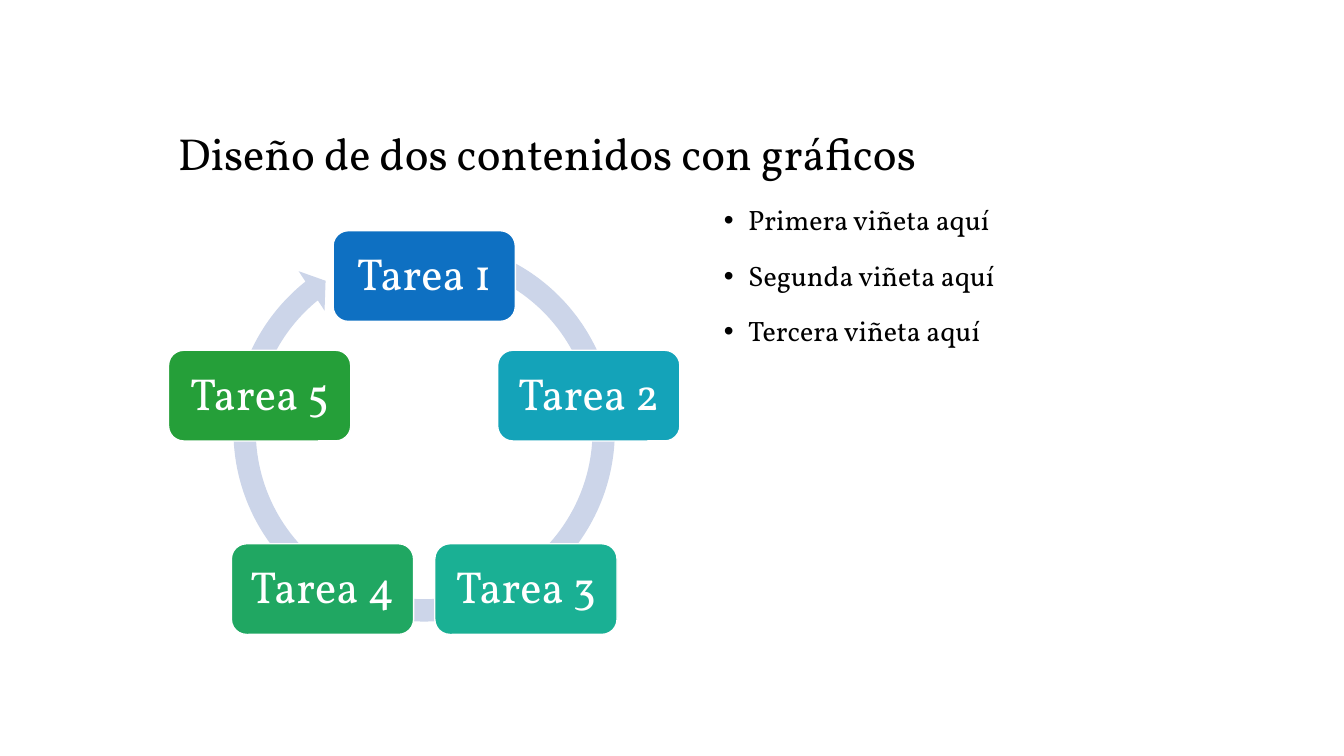
from math import cos, pi, sin

from lxml.etree import SubElement
from pptx import Presentation
from pptx.dml.color import RGBColor as Rgb
from pptx.enum.shapes import MSO_SHAPE as Shape
from pptx.enum.text import MSO_ANCHOR as Anchor, PP_ALIGN as Align
from pptx.oxml.ns import qn
from pptx.util import Inches, Pt

# Grid: 160 columns by 90 rows
COLS, ROWS = 160, 90
UNIT = Inches(7.5) / ROWS
FONT = "Vollkorn"
BLACK = Rgb(0x00, 0x00, 0x00)
WHITE = Rgb(0xFF, 0xFF, 0xFF)
RING = Rgb(0xCC, 0xD5, 0xE9)
HUES = [
    Rgb(0x0E, 0x70, 0xC2),
    Rgb(0x14, 0xA3, 0xB9),
    Rgb(0x1A, 0xB0, 0x94),
    Rgb(0x20, 0xA7, 0x62),
    Rgb(0x25, 0x9F, 0x39),
]

TITLE = (20, 7, 126, 15)
WHEEL = (20, 24, 61, 55)
LIST = (85, 24, 61, 55)


def units(*box):
    return [round(n * UNIT) for n in box]


def write(par, text, size, color):
    par.line_spacing = 0.9
    run = par.add_run()
    run.text = text
    run.font.name = FONT
    run.font.size = Pt(size)
    run.font.color.rgb = color


def add_frame(slide, box):
    frame = slide.shapes.add_textbox(*units(*box)).text_frame
    frame.word_wrap = True
    return frame


def add_title(slide, box, text):
    frame = add_frame(slide, box)
    frame.vertical_anchor = Anchor.BOTTOM
    write(frame.paragraphs[0], text, 32, BLACK)


def add_list(slide, box, items):
    frame = add_frame(slide, box)
    for i, item in enumerate(items):
        par = frame.add_paragraph() if i else frame.paragraphs[0]
        props = par._p.get_or_add_pPr()
        props.set("marL", str(Inches(0.24)))
        props.set("indent", str(-Inches(0.24)))
        SubElement(props, qn("a:buFont")).set("typeface", "Arial")
        SubElement(props, qn("a:buChar")).set("char", "•")
        if i:
            par.space_before = Pt(18)
        write(par, item, 20, BLACK)


def add_shape(slide, kind, mid_x, mid_y, wide, high, fill):
    box = units(mid_x - wide / 2, mid_y - high / 2, wide, high)
    shape = slide.shapes.add_shape(kind, *box)
    shape.shadow.inherit = False
    shape.fill.solid()
    shape.fill.fore_color.rgb = fill
    return shape


def add_wheel(slide, box, tasks):
    left, top, wide, high = box
    mid_x, mid_y = left + wide / 2, top + high / 2

    # Ring with arrowhead
    ring = add_shape(slide, Shape.CIRCULAR_ARROW, mid_x, mid_y - 0.2,
                     48.36, 48.36, RING)
    ring.line.fill.background()
    for i, value in enumerate([0.055, 3.307, 138.718, 173.279, 0.058]):
        ring.adjustments[i] = value

    # Task boxes, spread evenly clockwise from the top
    node_w, node_h, radius = 21.7, 10.8, 20.6
    step = 2 * pi / len(tasks)
    hub_y = mid_y + radius * (1 - cos(step / 2)) / 2
    for i, (task, hue) in enumerate(zip(tasks, HUES)):
        node = add_shape(slide, Shape.ROUNDED_RECTANGLE,
                         mid_x + radius * sin(i * step),
                         hub_y - radius * cos(i * step),
                         node_w, node_h, hue)
        node.line.color.rgb = WHITE
        node.line.width = Pt(1)
        frame = node.text_frame
        frame.word_wrap = True
        frame.vertical_anchor = Anchor.MIDDLE
        par = frame.paragraphs[0]
        par.alignment = Align.CENTER
        write(par, task, 32, WHITE)


def main():
    deck = Presentation()
    deck.slide_width, deck.slide_height = units(COLS, ROWS)
    slide = deck.slides.add_slide(deck.slide_layouts[6])
    add_title(slide, TITLE, "Diseño de dos contenidos con gráficos")
    add_list(slide, LIST, [f"{rank} viñeta aquí" for rank in
                           ("Primera", "Segunda", "Tercera")])
    add_wheel(slide, WHEEL, [f"Tarea {n}" for n in range(1, 6)])
    deck.save("out.pptx")


if __name__ == "__main__":
    main()
